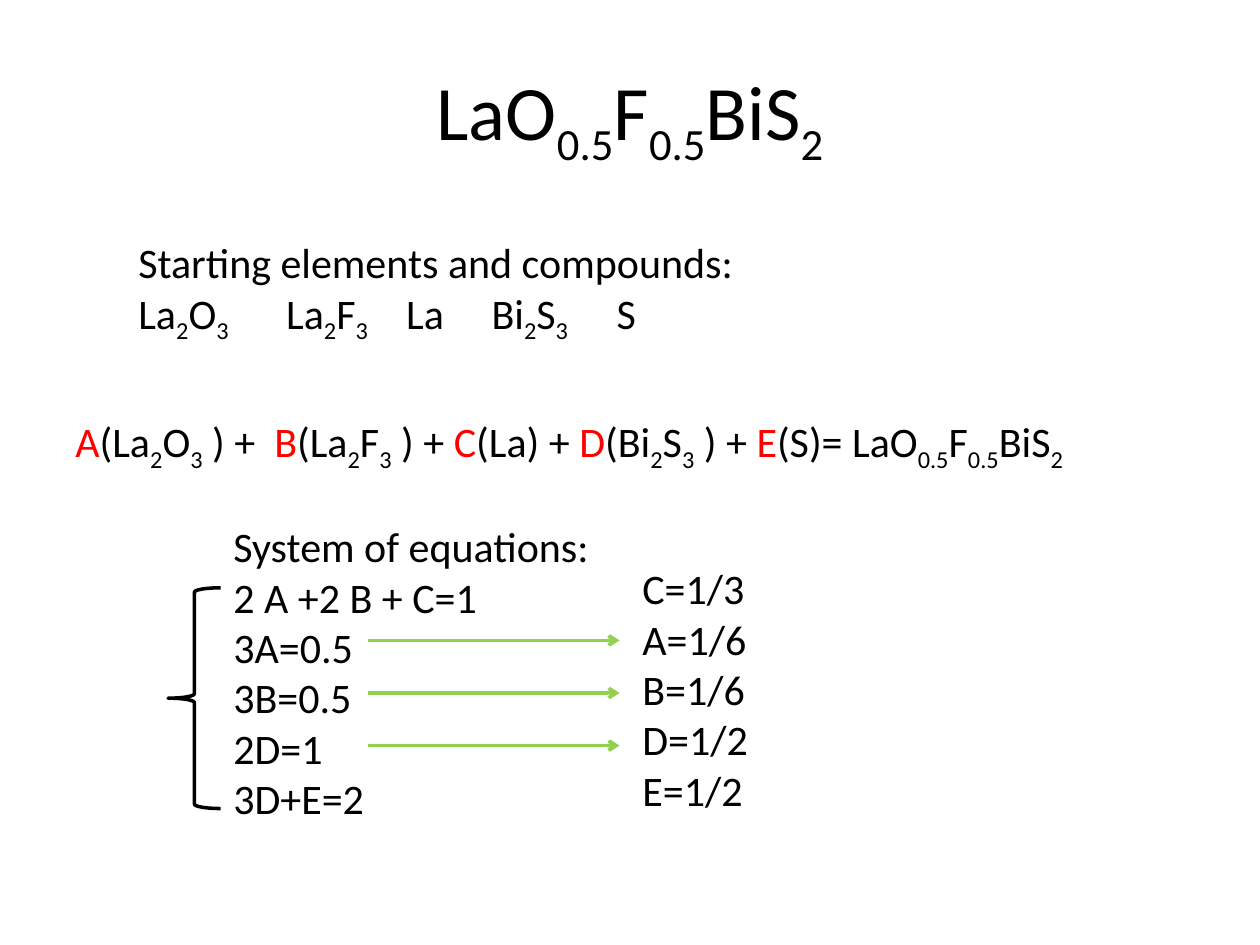
import pptx
import pptx.dml.color
import pptx.enum.shapes
import pptx.enum.text
import pptx.oxml.ns
import pptx.util
from lxml import etree
from pptx.util import Cm

BLACK, RED, GREEN = "000000", "FF0000", "92D050"


def color(hex_code):
    return pptx.dml.color.RGBColor.from_string(hex_code)


def add_xml(parent, tag, **attributes):
    return etree.SubElement(parent, pptx.oxml.ns.qn(tag), attributes)


class SlideWriter:
    font_name = "Calibri"
    body_size = 24
    title_size = 44
    line_width = 2

    def __init__(self, slide):
        self.slide = slide

    def place(self, shape, left, top, width, height):
        shape.left, shape.top = Cm(left), Cm(top)
        shape.width, shape.height = Cm(width), Cm(height)

    def runs(self, paragraph, markup, size):
        """Pieces are split by |; a leading _ lowers a piece, a leading * marks a coefficient."""
        for piece in markup.split("|"):
            run = paragraph.add_run()
            run.text = piece.lstrip("_*")
            run.font.name = self.font_name
            run.font.size = pptx.util.Pt(size)
            run.font.color.rgb = color(RED if piece.startswith("*") else BLACK)
            if piece.startswith("_"):
                run.font._element.set("baseline", "-25000")

    def lines(self, frame, lines):
        frame.word_wrap = True
        for index, markup in enumerate(lines):
            paragraph = frame.paragraphs[0] if index == 0 else frame.add_paragraph()
            self.runs(paragraph, markup, self.body_size)

    def title(self, markup, *box):
        title = self.slide.shapes.title
        self.place(title, *box)
        title.text_frame.vertical_anchor = pptx.enum.text.MSO_ANCHOR.MIDDLE
        paragraph = title.text_frame.paragraphs[0]
        paragraph.alignment = pptx.enum.text.PP_ALIGN.CENTER
        self.runs(paragraph, markup, self.title_size)

    def body(self, lines, *box):
        body = self.slide.placeholders[1]
        self.place(body, *box)
        body.text_frame.auto_size = pptx.enum.text.MSO_AUTO_SIZE.SHAPE_TO_FIT_TEXT
        self.lines(body.text_frame, lines)
        for paragraph in body.text_frame.paragraphs:
            paragraph.space_before = pptx.util.Pt(0)
            properties = paragraph._p.get_or_add_pPr()
            properties.set("marL", "0")
            properties.set("indent", "0")
            add_xml(properties, "a:buNone")

    def text(self, lines, *box, tabs=()):
        frame = self.slide.shapes.add_textbox(*map(Cm, box)).text_frame
        frame.auto_size = pptx.enum.text.MSO_AUTO_SIZE.SHAPE_TO_FIT_TEXT
        self.lines(frame, lines)
        if tabs:
            properties = frame.paragraphs[-1]._p.get_or_add_pPr()
            tab_list = add_xml(properties, "a:tabLst")
            for stop in tabs:
                add_xml(tab_list, "a:tab", pos=str(Cm(stop)), algn="l")

    def outline(self, line, hex_code):
        line.color.rgb = color(hex_code)
        line.width = pptx.util.Pt(self.line_width)

    def brace(self, *box):
        brace = self.slide.shapes.add_shape(
            pptx.enum.shapes.MSO_SHAPE.LEFT_BRACE, *map(Cm, box))
        brace.shadow.inherit = False
        brace.fill.background()
        self.outline(brace.line, BLACK)

    def arrow(self, left, right, y):
        arrow = self.slide.shapes.add_connector(
            pptx.enum.shapes.MSO_CONNECTOR.STRAIGHT, Cm(left), Cm(y), Cm(right), Cm(y))
        self.outline(arrow.line, GREEN)
        add_xml(arrow.line._get_or_add_ln(), "a:tailEnd", type="arrow")
        add_xml(arrow._element.spPr, "a:effectLst")


def main():
    deck = pptx.Presentation()
    deck.slide_width, deck.slide_height = Cm(25.4), Cm(19.05)
    writer = SlideWriter(deck.slides.add_slide(deck.slide_layouts[1]))

    lanthanum_oxide = "La|_2|O|_3"
    lanthanum_fluoride = "La|_2|F|_3"
    bismuth_sulfide = "Bi|_2|S|_3"
    product = "LaO|_0.5|F|_0.5|BiS|_2"

    writer.title(product, 1.27, 0.76, 22.86, 3.18)

    ingredients = [lanthanum_oxide, lanthanum_fluoride, "La", bismuth_sulfide, "S"]
    writer.text(["Starting elements and compounds:", "|\t|".join(ingredients)],
                2.54, 4.65, 17.58, 2.31, tabs=(2.98, 5.4, 7.12, 9.64))

    reaction = (f"*A|({lanthanum_oxide}| ) +\t|*B|({lanthanum_fluoride}| ) + |*C|(La) + "
                f"|*D|({bismuth_sulfide}| ) + |*E|(S)= {product}")
    writer.text([reaction], 1.27, 8.26, 22.43, 1.27, tabs=(4.01,))

    writer.body(["System of equations:", "2 A +2 B + C=1", "3A=0.5", "3B=0.5",
                 "2D=1", "3D+E=2"], 4.45, 10.37, 17.58, 6.4)
    writer.brace(3.39, 11.85, 1.06, 4.45)
    writer.text(["C=1/3", "A=1/6", "B=1/6", "D=1/2", "E=1/2"], 12.7, 11.22, 6.56, 5.38)

    for row in range(3):
        writer.arrow(7.41, 12.49, 12.91 + row * 1.06)

    deck.save("out.pptx")


if __name__ == "__main__":
    main()
